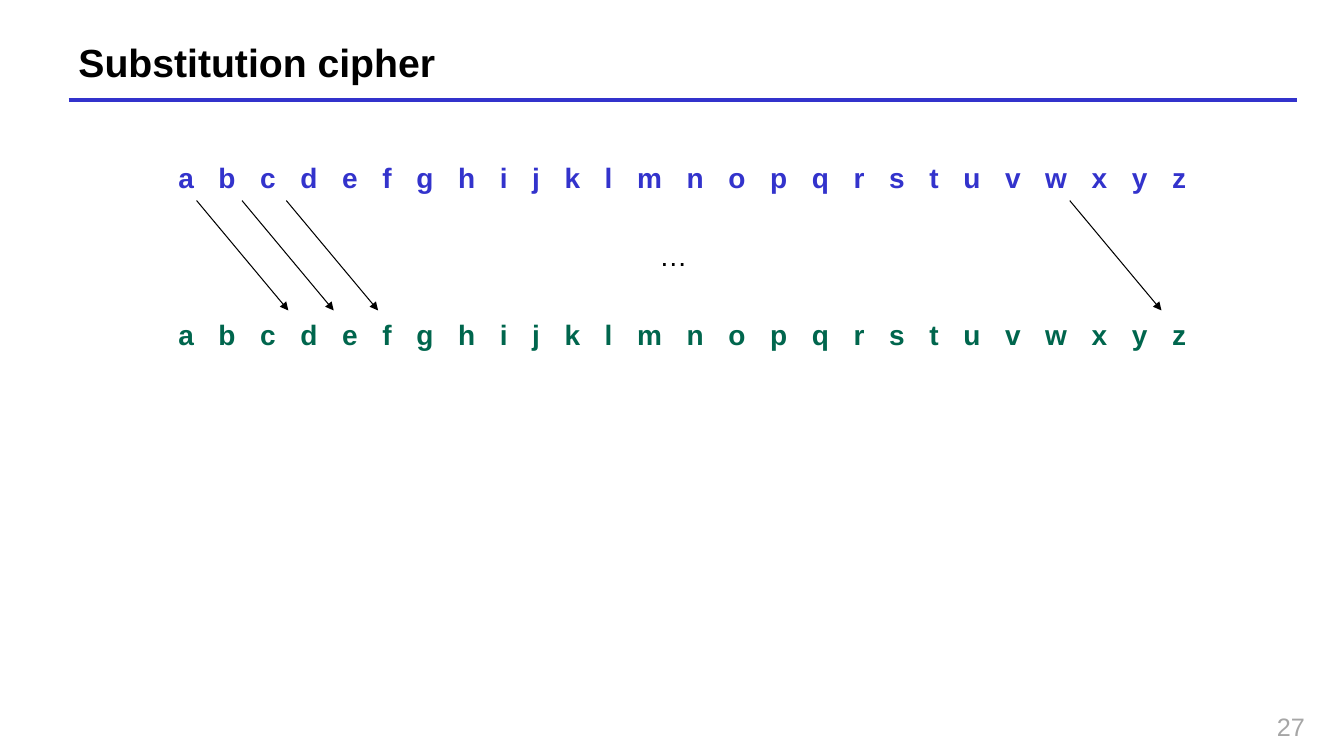
from dataclasses import dataclass

from lxml import etree
from pptx import Presentation, util as u
from pptx.dml.color import RGBColor
from pptx.enum import shapes, text
from pptx.oxml.ns import qn

PX = 9144  # EMU per px, 100 px to the inch
BLUE, GREEN, BLACK, GREY = "3333CC", "00664D", "000000", "A6A6A6"
LEFT, WIDE = 68, 1218
ABC = " ".join("abcdefghijklmnopqrstuvwxyz")


@dataclass
class Row:
    words: str
    x: int
    y: int
    color: str
    bold: bool
    track: int  # letter spacing in hundredths of a point


ROWS = [
    Row(ABC, LEFT, 154, BLUE, True, 600),
    Row("…", LEFT - 9, 232, BLACK, False, 0),
    Row(ABC, LEFT, 310, GREEN, True, 600),
]
# Start of each arrow: a, b, c and w
STARTS = [195, 240, 284, 1061]


def px(n: int) -> u.Emu:
    return u.Emu(n * PX)


def rgb(code: str) -> RGBColor:
    return RGBColor.from_string(code)


def write(slide, words: str, x: int, y: int, w: int, h: int, *, size: int = 20,
          color: str = BLACK, bold: bool = False, track: int = 0,
          align=text.PP_ALIGN.LEFT, anchor=text.MSO_ANCHOR.TOP) -> None:
    box = slide.shapes.add_textbox(px(x), px(y), px(w), px(h))
    frame = box.text_frame
    frame.word_wrap = True
    frame.vertical_anchor = anchor
    para = frame.paragraphs[0]
    para.alignment = align
    run = para.add_run()
    run.text = words
    font = run.font
    font.name, font.size, font.bold = "Arial", u.Pt(size), bold
    font.color.rgb = rgb(color)
    if track:
        run._r.get_or_add_rPr().set("spc", str(track))


def draw(slide, x: int, y: int, to_x: int, to_y: int, *, color: str,
         width: float, arrow: bool = False) -> None:
    line = slide.shapes.add_connector(
        shapes.MSO_CONNECTOR.STRAIGHT, px(x), px(y), px(to_x), px(to_y))
    line.line.color.rgb = rgb(color)
    line.line.width = u.Pt(width)
    if arrow:
        etree.SubElement(line.line._get_or_add_ln(), qn("a:tailEnd"), type="triangle")
    etree.SubElement(line._element.spPr, qn("a:effectLst"))


def main() -> None:
    deck = Presentation()
    deck.slide_width, deck.slide_height = px(1333), px(750)
    slide = deck.slides.add_slide(deck.slide_layouts[6])

    # Title with its rule
    draw(slide, LEFT, 99, LEFT + WIDE, 99, color=BLUE, width=3)
    write(slide, "Substitution cipher", LEFT, 36, WIDE, 50, size=28, bold=True,
          anchor=text.MSO_ANCHOR.MIDDLE)

    # Plain alphabet, ellipsis, cipher alphabet
    for row in ROWS:
        write(slide, row.words, row.x, row.y, WIDE, 42, color=row.color,
              bold=row.bold, track=row.track, align=text.PP_ALIGN.CENTER)

    # Shift by three letters
    for x in STARTS:
        draw(slide, x, 199, x + 91, 308, color=BLACK, width=0.75, arrow=True)

    # Slide number
    write(slide, "27", 1026, 701, 278, 36, size=18, color=GREY,
          align=text.PP_ALIGN.RIGHT)

    deck.save("out.pptx")


if __name__ == "__main__":
    main()
